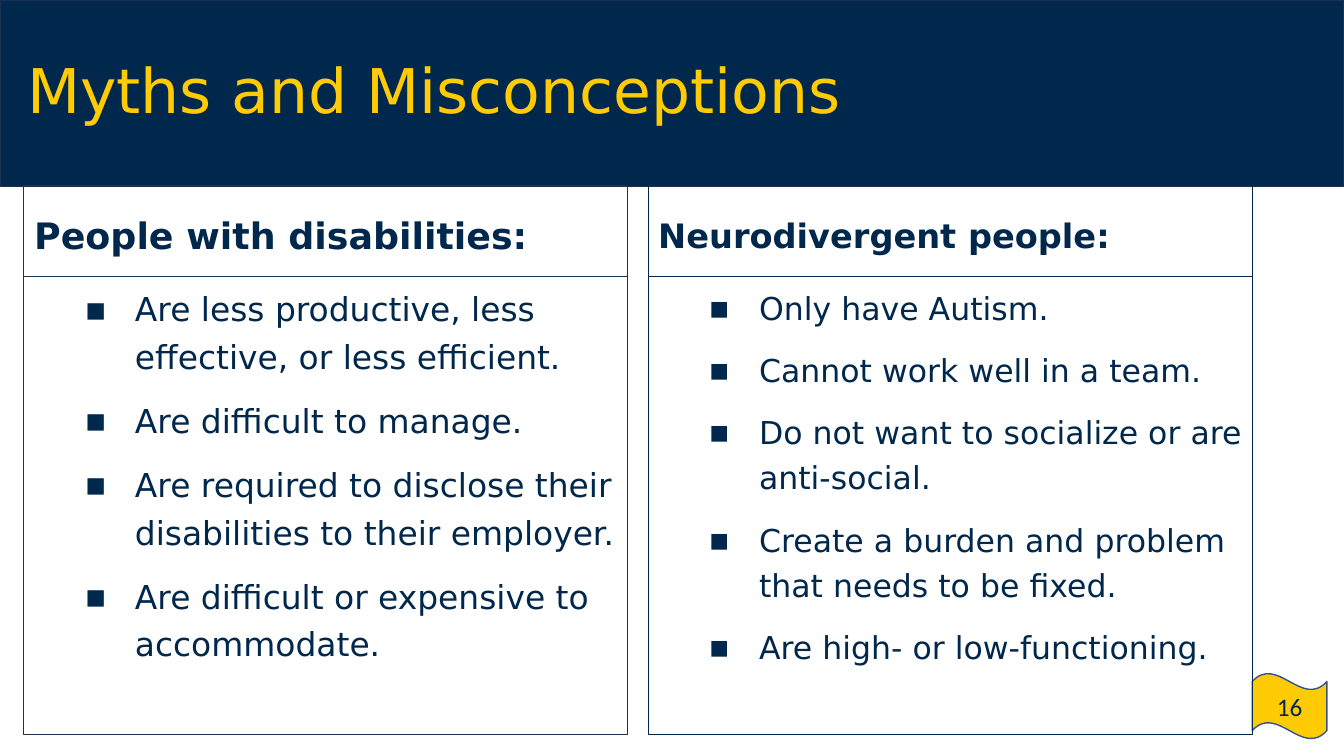
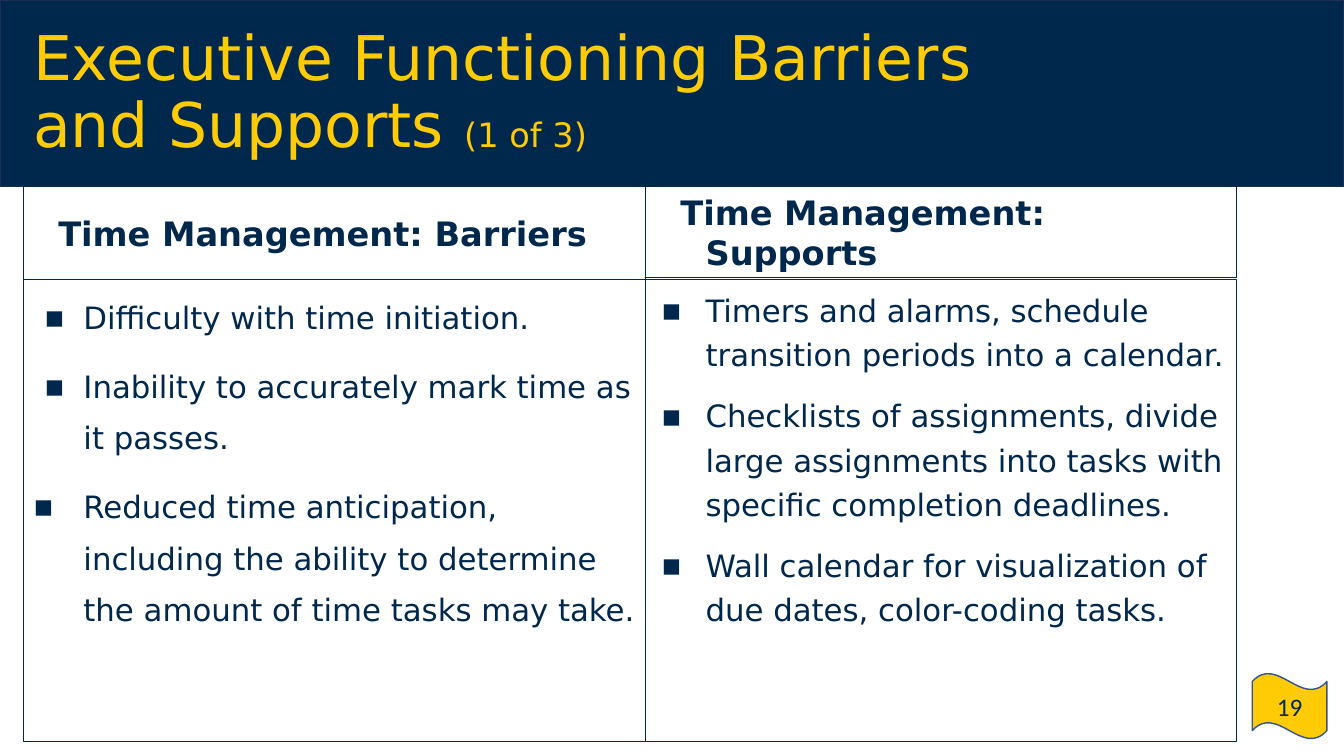
import pptx
import pptx.util
import pptx.dml.color
import pptx.enum.shapes
import pptx.enum.text
import pptx.oxml.ns
import lxml.etree

SCALE = 9144
COLORS = {"navy": "00274C", "gold": "FFCB05", "edge": "1C3052", "wave": "31538F"}
SHAPES = pptx.enum.shapes.MSO_SHAPE
ANCHORS = pptx.enum.text.MSO_ANCHOR
ALIGNMENTS = pptx.enum.text.PP_ALIGN
FONT = "DejaVu Sans"


def px(value):
    return pptx.util.Emu(value * SCALE)


def rgb(name):
    return pptx.dml.color.RGBColor.from_string(COLORS[name])


def set_all(target, values):
    for name, value in values.items():
        setattr(target, name, value)


class Deck:
    def __init__(self, width, height):
        self.presentation = pptx.Presentation()
        set_all(self.presentation, {"slide_width": px(width), "slide_height": px(height)})
        self.width = width
        self.slide = None

    def add_slide(self, number):
        self.slide = self.presentation.slides.add_slide(self.presentation.slide_layouts[6])
        self.box((0, 0, self.width, 185), fill="navy", line="edge", weight=1)
        badge = self.box((1242, 668, 74, 65), SHAPES.WAVE, "gold", "wave", 1)
        self.frame(badge, ANCHORS.MIDDLE)
        self.fill_paragraph(badge.text_frame.paragraphs[0], [(number, 18)], font="Calibri",
                            layout={"alignment": ALIGNMENTS.CENTER})

    def box(self, place, kind=SHAPES.RECTANGLE, fill=None, line="navy", weight=0.75):
        shape = self.slide.shapes.add_shape(kind, *map(px, place))
        shape.shadow.inherit = False
        if fill:
            shape.fill.solid()
            shape.fill.fore_color.rgb = rgb(fill)
        else:
            shape.fill.background()
        shape.line.color.rgb = rgb(line)
        shape.line.width = pptx.util.Pt(weight)
        return shape

    def frame(self, shape, anchor):
        set_all(shape.text_frame, {
            "word_wrap": True, "vertical_anchor": anchor,
            "margin_left": px(10), "margin_right": px(10),
            "margin_top": px(5), "margin_bottom": px(5)})

    def fill_paragraph(self, paragraph, runs, color="navy", bold=False, font=FONT,
                       layout=None, margin=0, indent=0, bullet=None):
        set_all(paragraph, {"alignment": ALIGNMENTS.LEFT, **(layout or {})})
        properties = paragraph._p.get_or_add_pPr()
        properties.set("marL", str(px(margin)))
        properties.set("indent", str(px(indent)))
        if bullet:
            qn = pptx.oxml.ns.qn
            bullet_color = lxml.etree.SubElement(properties, qn("a:buClr"))
            lxml.etree.SubElement(bullet_color, qn("a:srgbClr"), val=COLORS[color])
            lxml.etree.SubElement(properties, qn("a:buFont"), typeface=font)
            lxml.etree.SubElement(properties, qn("a:buChar"), char=bullet)
        for text, size in runs:
            run = paragraph.add_run()
            run.text = text
            set_all(run.font, {"name": font, "size": pptx.util.Pt(size), "bold": bold})
            run.font.color.rgb = rgb(color)

    def title(self, place, runs):
        shape = self.slide.shapes.add_textbox(*map(px, place))
        self.frame(shape, ANCHORS.MIDDLE)
        self.fill_paragraph(shape.text_frame.paragraphs[0], runs, "gold",
                            layout={"line_spacing": 0.9})

    def heading(self, place, text, size, before, spacing=1.0, margin=0, indent=0, line="navy"):
        shape = self.box(place, line=line)
        self.frame(shape, ANCHORS.MIDDLE)
        layout = {"line_spacing": spacing, "space_before": pptx.util.Pt(before)}
        self.fill_paragraph(shape.text_frame.paragraphs[0], [(text, size)], bold=True,
                            layout=layout, margin=margin, indent=indent)

    def bullets(self, place, items, size, margin, indents, spacing=1.2, line="navy"):
        shape = self.box(place, line=line)
        self.frame(shape, ANCHORS.TOP)
        text_frame = shape.text_frame
        layout = {"line_spacing": spacing, "space_before": pptx.util.Pt(12)}
        for index, (item, indent) in enumerate(zip(items, indents)):
            paragraph = text_frame.add_paragraph() if index else text_frame.paragraphs[0]
            self.fill_paragraph(paragraph, [(item, size)], layout=layout, margin=margin,
                                indent=indent, bullet="▪")


def add_myths(deck):
    deck.add_slide("16")
    deck.title((17, 20, 1021, 145), [("Myths and Misconceptions", 44)])
    columns = [
        (23, "People with disabilities:", 26, 1, "edge", 23.5, 101, [
            "Are less productive, less effective, or less efficient.",
            "Are difficult to manage.",
            "Are required to disclose their disabilities to their employer.",
            "Are difficult or expensive to accommodate."]),
        (643, "Neurodivergent people:", 24, 0, "navy", 22.5, 100, [
            "Only have Autism.",
            "Cannot work well in a team.",
            "Do not want to socialize or are anti-social.",
            "Create a burden and problem that needs to be fixed.",
            "Are high- or low-functioning."]),
    ]
    for left, heading, heading_size, offset, line, size, margin, items in columns:
        deck.heading((left, 184, 599, 90), heading, heading_size, 12, 1.2, offset, line=line)
        deck.bullets((left, 274, 599, 455), items, size, margin, [-50] * len(items), line=line)


def add_time_management(deck):
    deck.add_slide("19")
    deck.title((23, 21, 1046, 145),
               [("Executive Functioning Barriers and Supports ", 44), ("(1 of 3)", 24)])
    columns = [
        (23, 617, 92, "Time Management: Barriers", 1.4, [-39, -39, -50], [
            "Difficulty with time initiation.",
            "Inability to accurately mark time as it passes.",
            "Reduced time anticipation, including the ability to determine "
            "the amount of time tasks may take."]),
        (640, 586, 90, "Time Management: Supports", 1.2, [-44] * 3, [
            "Timers and alarms, schedule transition periods into a calendar.",
            "Checklists of assignments, divide large assignments into tasks "
            "with specific completion deadlines.",
            "Wall calendar for visualization of due dates, color-coding tasks."]),
    ]
    for left, width, height, heading, spacing, indents, items in columns:
        deck.heading((left, 185, width, height), heading, 24, 18, margin=50, indent=-25)
        deck.bullets((left, 277, width, 459), items, 22, 50, indents, spacing)


def main():
    deck = Deck(1333, 750)
    add_myths(deck)
    add_time_management(deck)
    deck.presentation.save("out.pptx")


if __name__ == "__main__":
    main()
